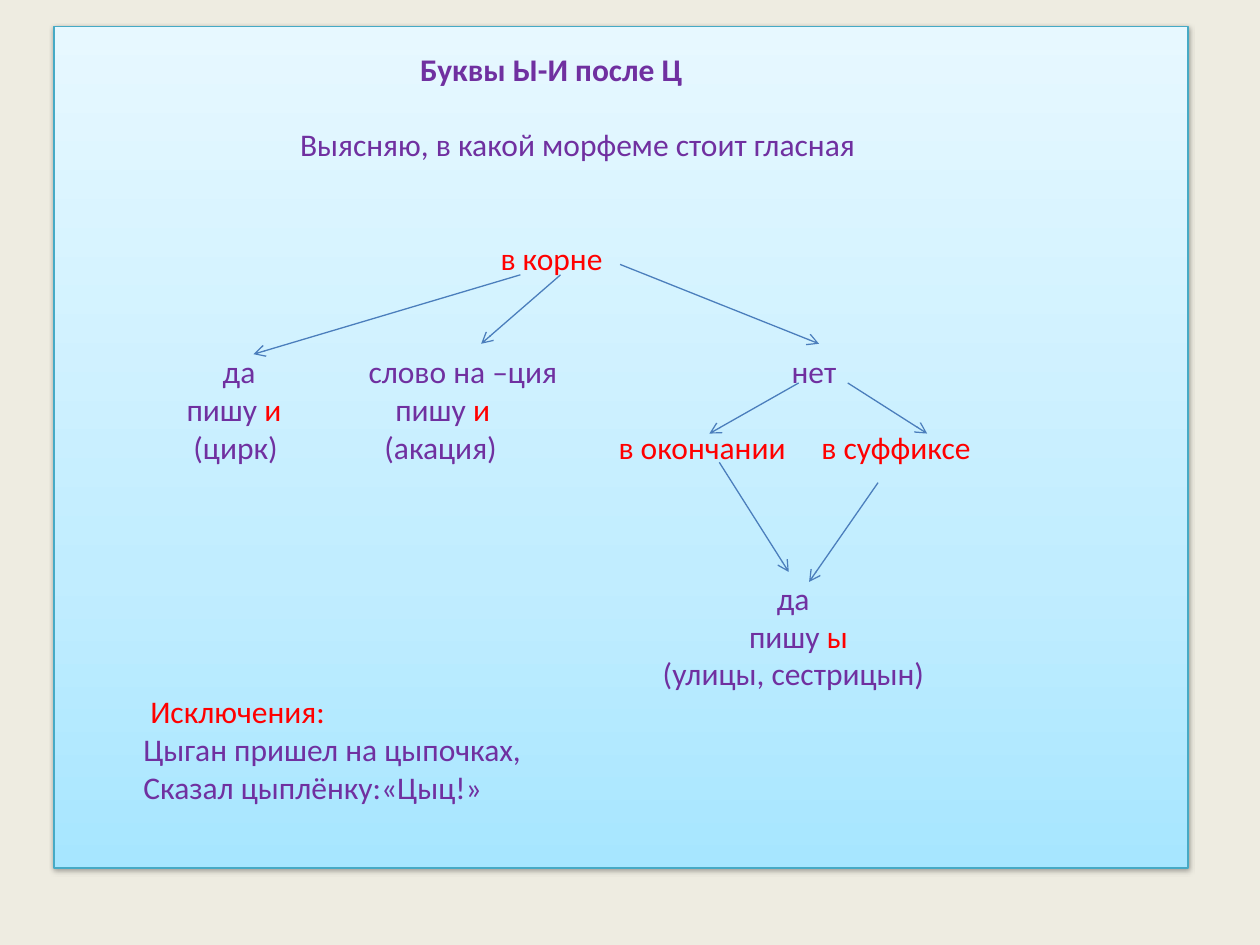
from copy import deepcopy
from lxml.etree import SubElement as Sub
from pptx import Presentation
from pptx.dml.color import RGBColor as RGB
from pptx.enum.shapes import MSO_CONNECTOR as Link
from pptx.enum.text import MSO_ANCHOR as Anchor, MSO_AUTO_SIZE as Fit, PP_ALIGN as Align
from pptx.oxml.ns import qn
from pptx.util import Cm, Pt

BACK = RGB(0xEE, 0xEC, 0xE1)
EDGE = RGB(0x46, 0xAA, 0xC5)
ARROW = RGB(0x4B, 0x7E, 0xBC)
PURPLE = RGB(0x70, 0x30, 0xA0)
RED = RGB(0xFF, 0, 0)
SHADES = [(0, RGB(0xA7, 0xE6, 0xFF)), (0.35, RGB(0xC1, 0xED, 0xFF)),
          (1, RGB(0xE7, 0xF8, 0xFF))]
FONT, SIZE, PITCH = "Calibri", 18, 21.6
LEFT, TOP, WIDE, HIGH = 1.09, 0.53, 22.86, 16.97
PAD, HEAD = 0.25, 0.47

# Each line: empty rows above it, indent in cm, purple part, red part
LINES = [
    (0, 7.13, "Буквы Ы-И после Ц", ""),
    (1, 4.71, "Выясняю, в какой морфеме стоит гласная", ""),
    (2, 8.75, "", "в корне"),
    (2, 3.15, "да", ""),
    (0, 2.42, "пишу ", "и"),
    (0, 2.56, "(цирк)", ""),
    (3, 14.32, "да", ""),
    (0, 13.76, "пишу ", "ы"),
    (0, 12.02, "(улицы, сестрицын)", ""),
    (0, 1.69, "", "Исключения:"),
    (0, 1.55, "Цыган пришел на цыпочках,", ""),
    (0, 1.55, "Сказал цыплёнку:«Цыц!»", ""),
]

# Branches beside the first column: row, left, width in cm, lines
BRANCHES = [
    (8, 6.09, 4.5, [(0, 0, "слово на –ция", ""), (0, 0.54, "пишу ", "и"),
                    (0, 0.32, "(акация)", "")]),
    (8, 14.62, 1.5, [(0, 0, "нет", "")]),
    (10, 11.13, 3.8, [(0, 0, "", "в окончании")]),
    (10, 15.22, 3.8, [(0, 0, "", "в суффиксе")]),
]

# Arrows in cm: from x, from y, to x, to y
ARROWS = [
    (10.49, 5.54, 5.11, 7.14),
    (11.3, 5.54, 9.7, 6.93),
    (12.5, 5.33, 16.51, 6.93),
    (16.1, 7.72, 14.3, 8.74),
    (17.09, 7.72, 18.69, 8.74),
    (17.7, 9.73, 16.31, 11.73),
    (14.5, 9.32, 15.9, 11.53),
]


def paint(panel):
    """Give the panel its gradient, edge and soft shadow."""
    fill = panel.fill
    fill.gradient()
    fill.gradient_angle = 90
    stops = panel._element.spPr.find(".//" + qn("a:gsLst"))
    stops.append(deepcopy(stops[-1]))
    for stop, (place, shade) in zip(fill.gradient_stops, SHADES):
        stop.position = place
        stop.color.rgb = shade
    panel.line.color.rgb = EDGE
    panel.line.width = Pt(0.75)
    glow = Sub(Sub(panel._element.spPr, qn("a:effectLst")), qn("a:outerShdw"),
               blurRad=str(Pt(3.1)), dist=str(Pt(1.6)), dir="5400000", rotWithShape="0")
    tone = Sub(glow, qn("a:srgbClr"), val="000000")
    Sub(tone, qn("a:alpha"), val="38000")


def add_run(para, text, color):
    run = para.add_run()
    run.text = text
    font = run.font
    font.name, font.size, font.bold = FONT, Pt(SIZE), False
    font.color.rgb = color


def write(frame, lines, pad=0, head=0):
    """Fill a frame with lines, each at its own indent."""
    frame.auto_size = Fit.NONE
    frame.word_wrap = True
    frame.vertical_anchor = Anchor.TOP
    frame.margin_left = frame.margin_right = Cm(pad)
    frame.margin_top, frame.margin_bottom = Cm(head), 0
    for i, (gap, left, plain, marked) in enumerate(lines):
        para = frame.add_paragraph() if i else frame.paragraphs[0]
        para.alignment = Align.LEFT
        para.line_spacing = Pt(PITCH)
        para.space_before = Pt(gap * PITCH)
        props = para._p.get_or_add_pPr()
        props.set("marL", str(Cm(left)))
        props.set("indent", "0")
        for text, color in ((plain, PURPLE), (marked, RED)):
            if text:
                add_run(para, text, color)


def add_branch(slide, row, left, wide, lines):
    step = Pt(PITCH)
    box = slide.shapes.add_textbox(Cm(LEFT + PAD + left), Cm(TOP + HEAD) + row * step,
                                   Cm(wide), len(lines) * step)
    write(box.text_frame, lines)


def add_arrow(slide, ends):
    link = slide.shapes.add_connector(Link.STRAIGHT, *map(Cm, ends))
    link.line.color.rgb = ARROW
    link.line.width = Pt(0.75)
    Sub(link.line._get_or_add_ln(), qn("a:tailEnd"), type="arrow")
    Sub(link._element.spPr, qn("a:effectLst"))


def main():
    deck = Presentation()
    deck.slide_width, deck.slide_height = Cm(25.4), Cm(19.05)
    slide = deck.slides.add_slide(deck.slide_layouts[5])
    slide.background.fill.solid()
    slide.background.fill.fore_color.rgb = BACK

    panel = slide.shapes.title
    panel.left, panel.top, panel.width, panel.height = map(Cm, (LEFT, TOP, WIDE, HIGH))
    paint(panel)
    write(panel.text_frame, LINES, PAD, HEAD)
    panel.text_frame.paragraphs[0].runs[0].font.bold = True

    for branch in BRANCHES:
        add_branch(slide, *branch)
    for ends in ARROWS:
        add_arrow(slide, ends)
    deck.save("out.pptx")


if __name__ == "__main__":
    main()
